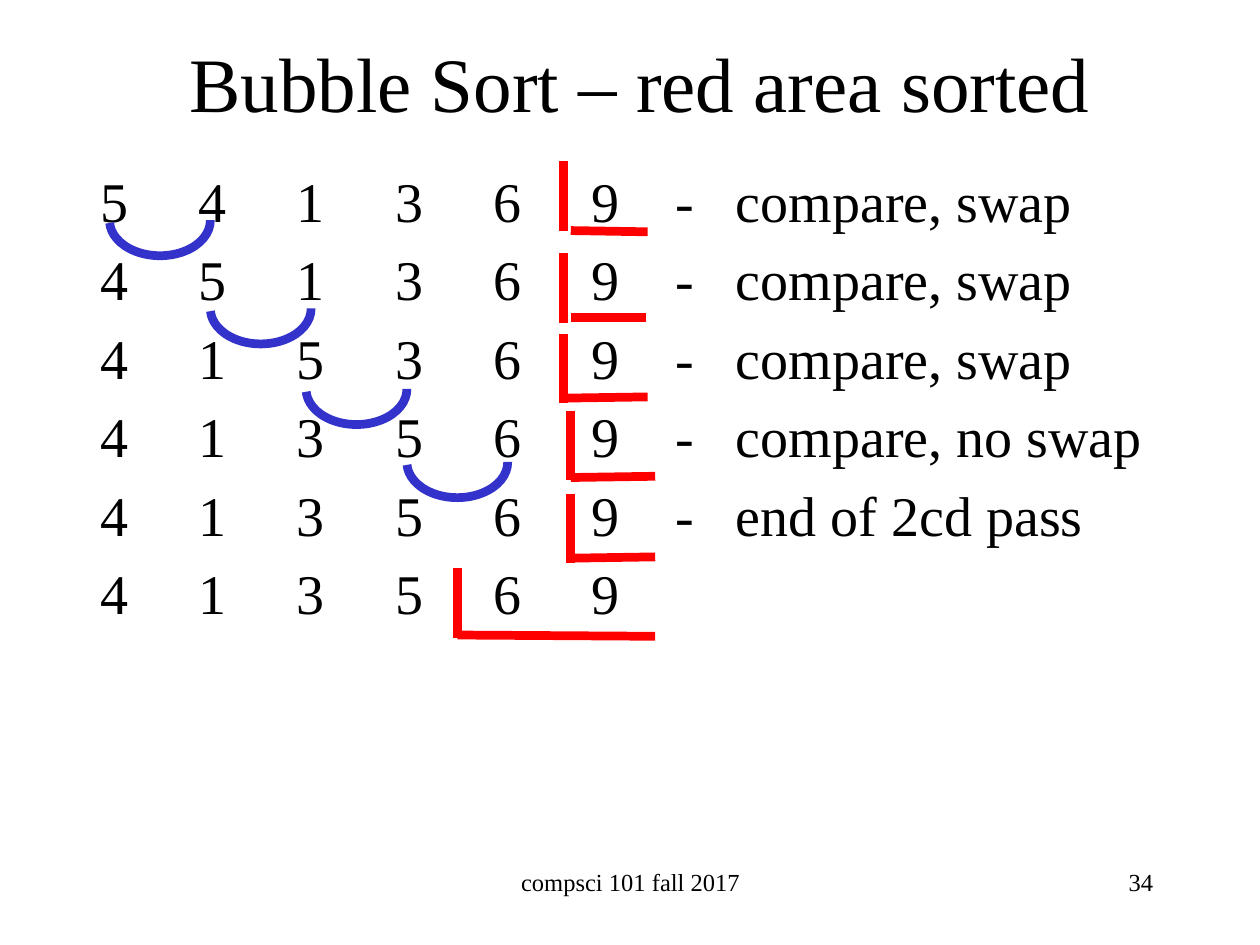
import pptx
import pptx.util
import pptx.dml.color
import pptx.enum.shapes
import pptx.enum.text
import pptx.oxml
import pptx.oxml.ns
from pptx.util import Inches

BLACK = pptx.dml.color.RGBColor(0x00, 0x00, 0x00)
BLUE = pptx.dml.color.RGBColor(0x33, 0x33, 0xCC)
RED = pptx.dml.color.RGBColor(0xFF, 0x00, 0x00)
FONT = "Times New Roman"
ALIGN = pptx.enum.text.PP_ALIGN
ANCHOR = pptx.enum.text.MSO_ANCHOR


def add_text(paragraph, text, size, alignment, spacing=0):
    paragraph.alignment = alignment
    run = paragraph.add_run()
    run.text = text
    run.font.name = FONT
    run.font.size = pptx.util.Pt(size)
    run.font.color.rgb = BLACK
    if spacing:
        run._r.get_or_add_rPr().set("spc", str(spacing * 100))


def place(shape, left, top, width, height, anchor):
    shape.left, shape.top = Inches(left), Inches(top)
    shape.width, shape.height = Inches(width), Inches(height)
    shape.text_frame.word_wrap = True
    shape.text_frame.auto_size = pptx.enum.text.MSO_AUTO_SIZE.NONE
    shape.text_frame.vertical_anchor = anchor


presentation = pptx.Presentation()
presentation.slide_width, presentation.slide_height = Inches(10), Inches(7.5)
slide = presentation.slides.add_slide(presentation.slide_layouts[1])

# Title
title = slide.shapes.title
place(title, 0.83, 0.02, 8.5, 1.25, ANCHOR.MIDDLE)
add_text(title.text_frame.paragraphs[0], "Bubble Sort – red area sorted", 44, ALIGN.CENTER)

# Sorting steps: one widened space sets each column gap, in points
steps = [
    ("541369", "compare, swap"),
    ("451369", "compare, swap"),
    ("415369", "compare, swap"),
    ("413569", "compare, no swap"),
    ("413569", "end of 2cd pass"),
    ("413569", ""),
]
column_gaps = [32] * 5 + [24, 16]
body = slide.placeholders[1]
place(body, 0.7, 1.27, 9, 5.92, ANCHOR.TOP)
for index, (numbers, comment) in enumerate(steps):
    frame = body.text_frame
    paragraph = frame.add_paragraph() if index else frame.paragraphs[0]
    properties = paragraph._p.get_or_add_pPr()
    properties.set("marL", "0")
    properties.set("indent", "0")
    properties.append(pptx.oxml.parse_xml(f"<a:buNone {pptx.oxml.ns.nsdecls('a')}/>"))
    cells = list(numbers) + (["-", comment] if comment else [])
    add_text(paragraph, cells[0], 32, ALIGN.LEFT)
    for gap, cell in zip(column_gaps, cells[1:]):
        add_text(paragraph, " ", 32, ALIGN.LEFT, gap)
        add_text(paragraph, cell, 32, ALIGN.LEFT)

# Blue arcs under the compared pairs
for left, top in [(0.87, 1.47), (1.67, 2.17), (2.43, 2.81), (3.23, 3.39)]:
    arc = slide.shapes.add_shape(
        pptx.enum.shapes.MSO_SHAPE.ARC, Inches(left), Inches(top), Inches(0.8), Inches(0.56))
    arc.adjustments[0] = 215.73
    arc.adjustments[1] = 106.31
    arc.shadow.inherit = False
    arc.fill.background()
    arc.line.color.rgb = BLUE
    arc.line.width = pptx.util.Pt(5)

# Red borders of the sorted area: side x and top, then underline from right to left
borders = [
    (4.47, 1.28, (5.14, 1.84, 4.53, 1.83)),
    (4.47, 2.01, (5.13, 2.52, 4.53, 2.52)),
    (4.47, 2.65, (5.14, 3.15, 4.47, 3.16)),
    (4.53, 3.26, (5.2, 3.78, 4.53, 3.79)),
    (4.53, 3.92, (5.2, 4.42, 4.53, 4.43)),
    (3.63, 4.51, (5.2, 5.05, 3.63, 5.04)),
]
for side, top, underline in borders:
    for ends in [(side, top, side, top + 0.55), underline]:
        line = slide.shapes.add_connector(
            pptx.enum.shapes.MSO_CONNECTOR.STRAIGHT, *[Inches(end) for end in ends])
        line.line.color.rgb = RED
        line.line.width = pptx.util.Pt(5)
        line._element.spPr.append(
            pptx.oxml.parse_xml(f"<a:effectLst {pptx.oxml.ns.nsdecls('a')}/>"))

# Footer and slide number
for left, width, text, alignment in [
    (3.42, 3.17, "compsci 101 fall 2017", ALIGN.CENTER),
    (7.17, 2.08, "34", ALIGN.RIGHT),
]:
    box = slide.shapes.add_textbox(0, 0, 0, 0)
    place(box, left, 6.83, width, 0.5, ANCHOR.TOP)
    add_text(box.text_frame.paragraphs[0], text, 14, alignment)

presentation.save("out.pptx")
